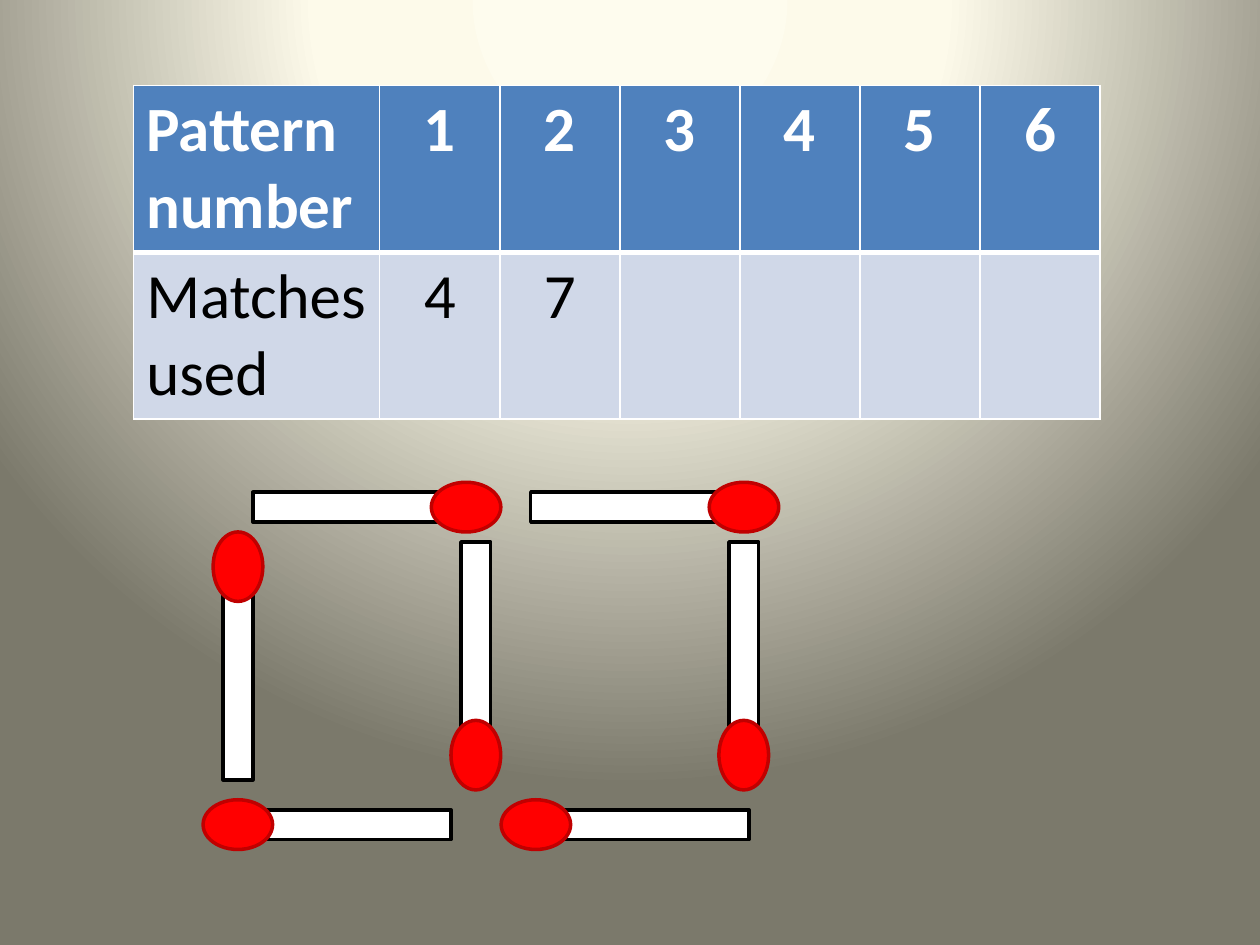
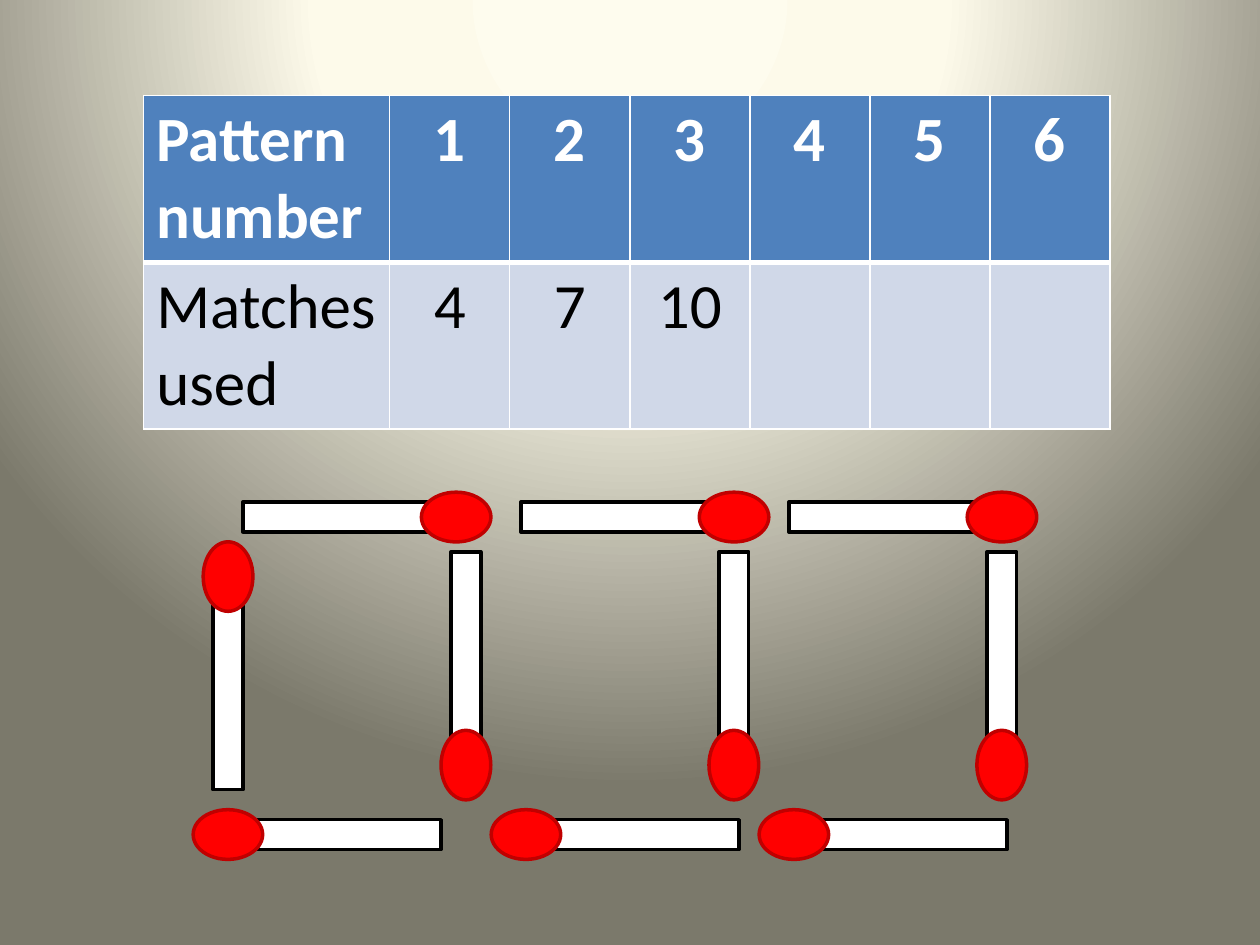
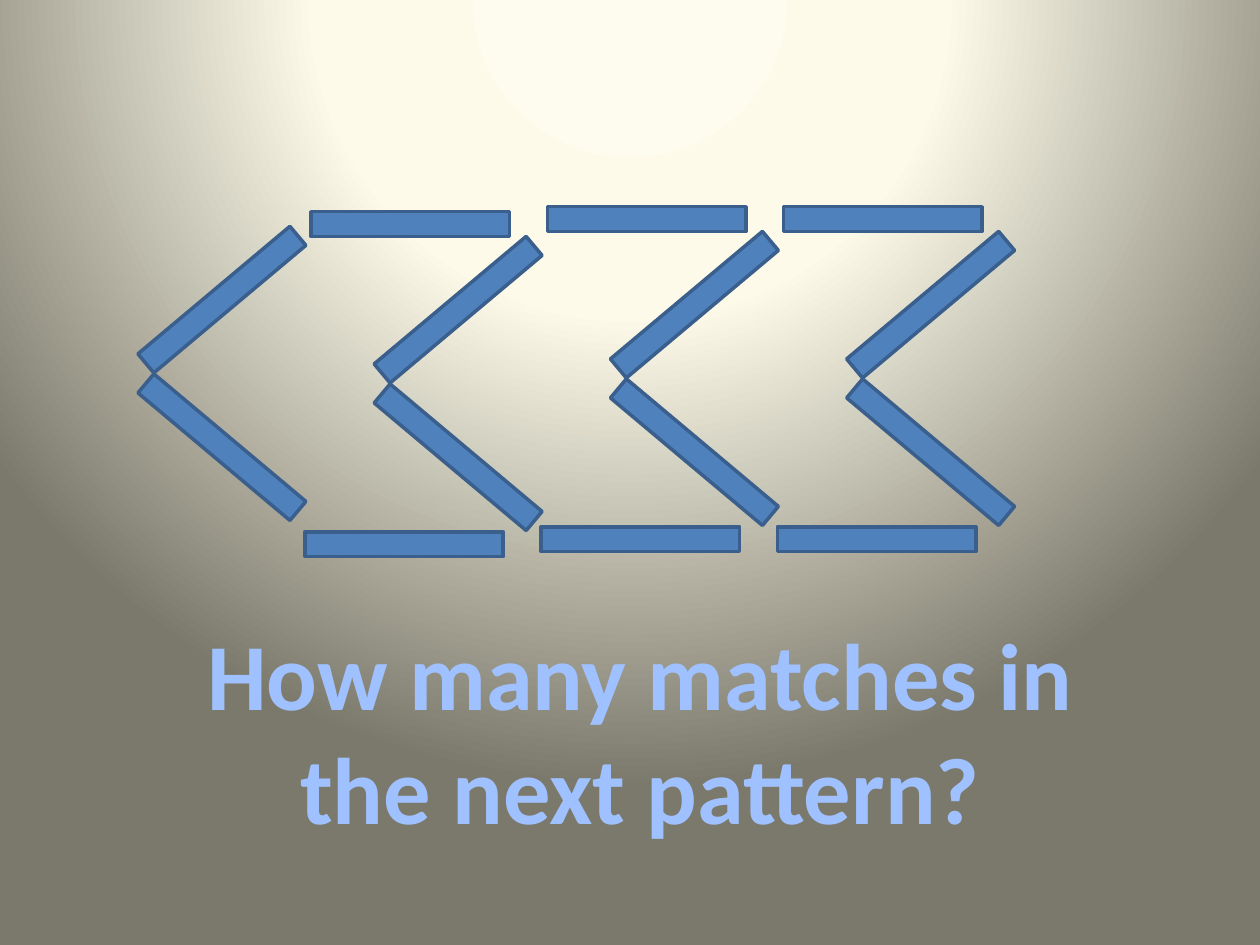
"""Build three slides about matchstick patterns."""
from dataclasses import dataclass
from enum import IntEnum

from pptx import Presentation
from pptx.dml.color import RGBColor
from pptx.enum.shapes import MSO_SHAPE
from pptx.enum.text import MSO_ANCHOR, MSO_AUTO_SIZE, PP_ALIGN
from pptx.oxml import parse_xml
from pptx.oxml.ns import nsdecls
from pptx.presentation import Presentation as Deck
from pptx.shapes.autoshape import Shape
from pptx.slide import Slide
from pptx.table import _Cell as Cell
from pptx.util import Pt


@dataclass(frozen=True)
class Theme:
    """Colours, type sizes and line widths of the deck."""
    font: str = "Calibri"
    table_size: float = 36
    question_size: float = 54
    white: str = "FFFFFF"
    black: str = "000000"
    blue: str = "4F81BD"
    blue_edge: str = "3A5F8C"
    pale_blue: str = "D0D8E8"
    red: str = "FF0000"
    red_edge: str = "C00000"
    question_edge: str = "467AB8"
    edge_width: float = 2
    grid_width: float = 1
    header_rule_width: float = 3
    page_stops: tuple = ((0, "FEFCEE"), (40, "FDFAEA"), (100, "7B796B"))
    question_stops: tuple = ((0, "BFD3F9"), (9, "A0C1FF"), (50, "003D85"),
                             (79, "A0C1FF"), (100, "BFD3F9"))


class Head(IntEnum):
    """Rotation of a match by the side its head points to."""
    UP = 0
    RIGHT = 90
    DOWN = 180
    LEFT = 270


@dataclass(frozen=True)
class Match:
    """A match given by its centre and the direction of its head."""
    x: float
    y: float
    head: Head


@dataclass(frozen=True)
class PatternPage:
    """A slide with a table and a row of matchstick squares."""
    table_left: float
    table_top: float
    shift_x: float
    shift_y: float
    counts: tuple[str, ...]
    squares: int


THEME = Theme()
PAGES = (
    PatternPage(76.4, 48.8, 0, 0, ("4", "7"), 2),
    PatternPage(82.1, 54.5, -5.67, 5.67, ("4", "7", "10"), 3),
)
PATTERN_COUNT = 6
LABEL_WIDTH, NUMBER_WIDTH, ROW_HEIGHT = 140.6, 68.6, 93.6
MATCH_LENGTH, BAR_LENGTH, BAR_WIDTH = 141.7, 119, 17
HEAD_LENGTH, HEAD_WIDTH = 39.7, 28.4
SQUARE_PITCH = 153.1
STICK_LENGTH, STICK_WIDTH, STICK_PITCH = 113.4, 14.2, 135
CHEVRON_ANGLE = 40
CHEVRON_DROPS = (-2.88, 2.88, 0, 0)


def gradient_xml(stops: tuple, direction: str) -> str:
    """Return a gradient fill element as text."""
    marks = "".join(f'<a:gs pos="{place * 1000}"><a:srgbClr val="{colour}"/></a:gs>'
                    for place, colour in stops)
    return f'<a:gradFill {nsdecls("a")} rotWithShape="1"><a:gsLst>{marks}</a:gsLst>{direction}</a:gradFill>'


def line_xml(tag: str, colour: str, width: float) -> str:
    """Return a solid line element as text."""
    return (f'<a:{tag} {nsdecls("a")} w="{Pt(width)}"><a:solidFill>'
            f'<a:srgbClr val="{colour}"/></a:solidFill></a:{tag}>')


def set_background(deck: Deck) -> None:
    """Give every slide the round gradient through the master."""
    master = deck.slide_master
    master.background.fill.solid()
    solid = master.element.xpath("./p:cSld/p:bg/p:bgPr/a:solidFill")[0]
    direction = '<a:path path="circle"><a:fillToRect l="50000" t="-80000" r="50000" b="180000"/></a:path>'
    solid.getparent().replace(solid, parse_xml(gradient_xml(THEME.page_stops, direction)))


def paint(shape: Shape, fill: str, edge: str) -> None:
    """Set the fill and outline of a shape."""
    shape.shadow.inherit = False
    shape.fill.solid()
    shape.fill.fore_color.rgb = RGBColor.from_string(fill)
    shape.line.color.rgb = RGBColor.from_string(edge)
    shape.line.width = Pt(THEME.edge_width)


def draw_match(slide: Slide, match: Match) -> None:
    """Draw a match upright as a group and turn it."""
    group = slide.shapes.add_group_shape()
    top = match.y - MATCH_LENGTH / 2
    bar = group.shapes.add_shape(
        MSO_SHAPE.RECTANGLE, Pt(match.x - BAR_WIDTH / 2),
        Pt(top + MATCH_LENGTH - BAR_LENGTH), Pt(BAR_WIDTH), Pt(BAR_LENGTH))
    paint(bar, THEME.white, THEME.black)
    head = group.shapes.add_shape(
        MSO_SHAPE.OVAL, Pt(match.x - HEAD_WIDTH / 2), Pt(top), Pt(HEAD_WIDTH), Pt(HEAD_LENGTH))
    paint(head, THEME.red, THEME.red_edge)
    group.rotation = int(match.head)


def square_matches(squares: int) -> list[Match]:
    """List the matches that form a row of joined squares."""
    matches = [Match(136, 374.8, Head.UP)]
    for index in range(squares):
        step = index * SQUARE_PITCH
        top_gap, bottom_gap = (5.7, 17.2) if index else (0, 0)
        matches += [
            Match(186.9 + step + bottom_gap, 471.2, Head.LEFT),
            Match(215.3 + step + top_gap, 289.8, Head.RIGHT),
            Match(271.9 + step, 380.5, Head.DOWN),
        ]
    return matches


def format_cell(cell: Cell, text: str, is_header: bool, is_label: bool) -> None:
    """Fill, frame and write one table cell."""
    cell.fill.solid()
    cell.fill.fore_color.rgb = RGBColor.from_string(THEME.blue if is_header else THEME.pale_blue)
    rule, grid = THEME.header_rule_width, THEME.grid_width
    sides = {"lnL": grid, "lnR": grid, "lnT": grid if is_header else rule,
             "lnB": rule if is_header else grid}
    properties = cell._tc.get_or_add_tcPr()
    for position, (tag, width) in enumerate(sides.items()):
        properties.insert(position, parse_xml(line_xml(tag, THEME.white, width)))
    para = cell.text_frame.paragraphs[0]
    para.alignment = PP_ALIGN.LEFT if is_label else PP_ALIGN.CENTER
    para.font.size = Pt(THEME.table_size)
    if text:
        span = para.add_run()
        span.text = text
        span.font.name = THEME.font
        span.font.size = Pt(THEME.table_size)
        span.font.bold = is_header
        span.font.color.rgb = RGBColor.from_string(THEME.white if is_header else THEME.black)


def add_pattern_table(slide: Slide, page: PatternPage) -> None:
    """Add the table of pattern numbers and matches used."""
    numbers = [str(number) for number in range(1, PATTERN_COUNT + 1)]
    blanks = [""] * (PATTERN_COUNT - len(page.counts))
    rows = (["Pattern number", *numbers], ["Matches used", *page.counts, *blanks])
    table = slide.shapes.add_table(
        len(rows), len(rows[0]), Pt(page.table_left), Pt(page.table_top),
        Pt(LABEL_WIDTH + PATTERN_COUNT * NUMBER_WIDTH), Pt(len(rows) * ROW_HEIGHT)).table
    for index, column in enumerate(table.columns):
        column.width = Pt(NUMBER_WIDTH if index else LABEL_WIDTH)
    for row_index, texts in enumerate(rows):
        for column_index, text in enumerate(texts):
            format_cell(table.cell(row_index, column_index), text,
                        row_index == 0, column_index == 0)


def add_pattern_slide(deck: Deck, page: PatternPage) -> None:
    """Add a slide with a table and its squares."""
    slide = deck.slides.add_slide(deck.slide_layouts.get_by_name("Blank"))
    add_pattern_table(slide, page)
    for match in square_matches(page.squares):
        draw_match(slide, Match(match.x + page.shift_x, match.y + page.shift_y, match.head))


def draw_stick(slide: Slide, left: float, top: float, angle: float = 0) -> None:
    """Draw a plain blue stick."""
    stick = slide.shapes.add_shape(
        MSO_SHAPE.RECTANGLE, Pt(left), Pt(top), Pt(STICK_LENGTH), Pt(STICK_WIDTH))
    stick.rotation = angle
    paint(stick, THEME.blue, THEME.blue_edge)


def write_question(slide: Slide, text: str) -> None:
    """Write the question in the title placeholder."""
    box = slide.shapes.title
    box.left, box.top, box.width, box.height = Pt(90), Pt(348.5), Pt(551.5), Pt(138.2)
    frame = box.text_frame
    frame.word_wrap = True
    frame.auto_size = MSO_AUTO_SIZE.SHAPE_TO_FIT_TEXT
    frame.vertical_anchor = MSO_ANCHOR.TOP
    para = frame.paragraphs[0]
    para.alignment = PP_ALIGN.CENTER
    span = para.add_run()
    span.text = text
    span.font.name = THEME.font
    span.font.size = Pt(THEME.question_size)
    span.font.bold = True
    properties = span._r.get_or_add_rPr()
    properties.insert(0, parse_xml(line_xml("ln", THEME.question_edge, 0.83)))
    properties.insert(1, parse_xml(gradient_xml(THEME.question_stops, '<a:lin ang="5400000"/>')))


def add_question_slide(deck: Deck) -> None:
    """Add the slide with the chevron pattern and its question."""
    slide = deck.slides.add_slide(deck.slide_layouts.get_by_name("Title Only"))
    for index, drop in enumerate(CHEVRON_DROPS):
        step = index * STICK_PITCH
        if index:
            draw_stick(slide, 42.8 + step, 118.1 + drop)
            draw_stick(slide, 39.2 + step, 301 + drop)
        draw_stick(slide, 70.1 + step, 167 + drop, 360 - CHEVRON_ANGLE)
        draw_stick(slide, 70.1 + step, 251.3 + drop, CHEVRON_ANGLE)
    write_question(slide, "How many matches in the next pattern?")


def main() -> None:
    """Build and save the deck."""
    deck = Presentation()
    deck.slide_width, deck.slide_height = Pt(720), Pt(540)
    set_background(deck)
    for page in PAGES:
        add_pattern_slide(deck, page)
    add_question_slide(deck)
    deck.save("out.pptx")


if __name__ == "__main__":
    main()
